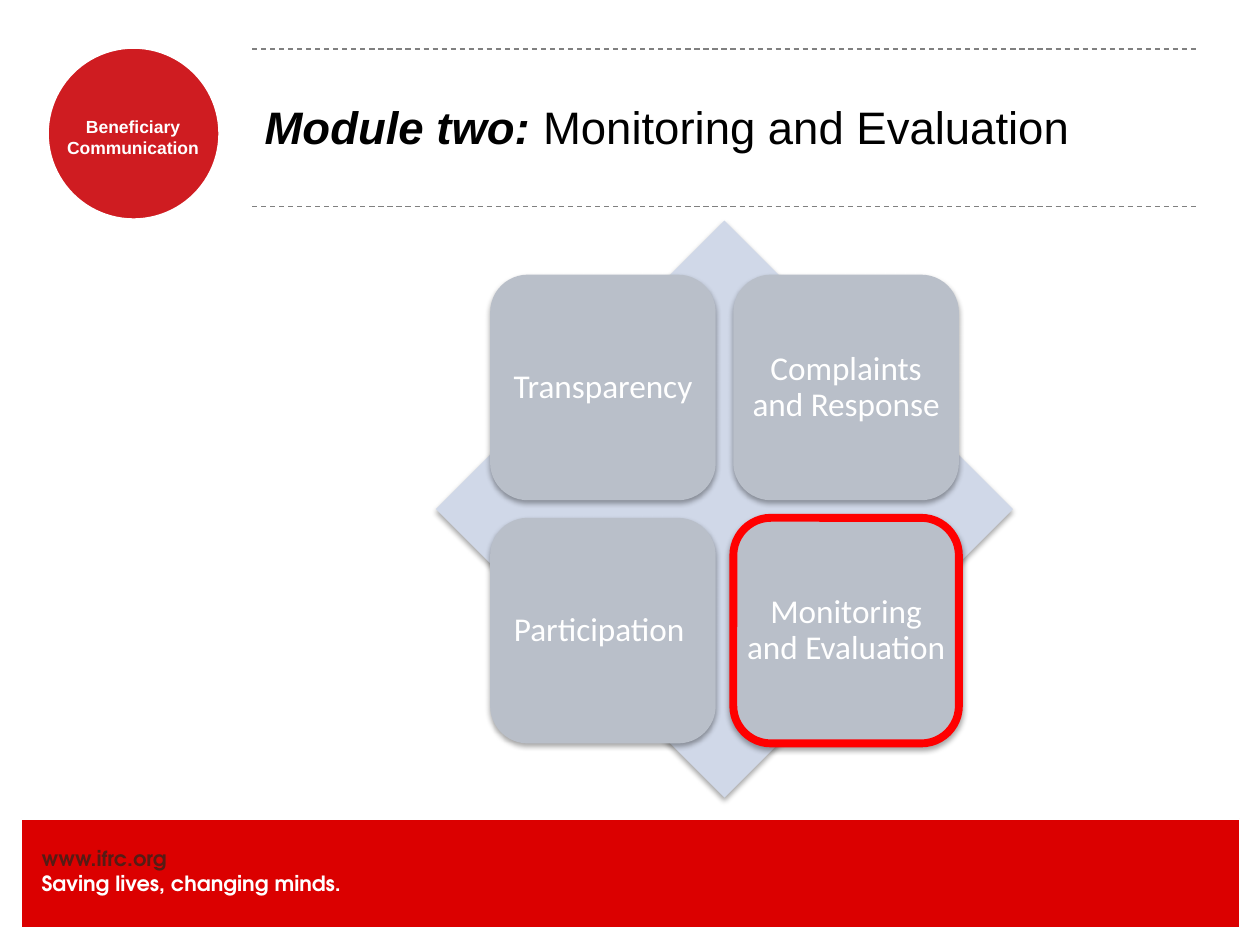
from dataclasses import dataclass
from typing import Optional

from lxml import etree
from pptx import Presentation
from pptx.dml.color import RGBColor
from pptx.enum import dml, shapes, text
from pptx.oxml.ns import qn
from pptx.util import Inches, Pt

WIDE, HIGH = 10, 7.5
WHITE, RED, GREY = "FFFFFF", "DB0000", "808080"
FORM = shapes.MSO_SHAPE


@dataclass
class Box:
    x: float
    y: float
    w: float
    h: float

    def place(self) -> list:
        return [Inches(v) for v in (self.x, self.y, self.w, self.h)]


@dataclass
class Run:
    words: str
    size: float
    font: str
    hue: str
    bold: bool = False
    slant: bool = False


@dataclass
class Card:
    words: str
    col: int
    row: int
    edge: Optional[str] = None


def tint(code: str) -> RGBColor:
    return RGBColor.from_string(code)


def add_run(para, run: Run) -> None:
    part = para.add_run()
    part.text = run.words
    font = part.font
    font.size, font.name = Pt(run.size), run.font
    font.bold, font.italic = run.bold, run.slant
    font.color.rgb = tint(run.hue)


def add_form(slide, kind, box: Box, fill: str,
             edge: Optional[str] = None, width: float = 0.75):
    form = slide.shapes.add_shape(kind, *box.place())
    form.shadow.inherit = False
    form.fill.solid()
    form.fill.fore_color.rgb = tint(fill)
    if edge:
        form.line.color.rgb = tint(edge)
        form.line.width = Pt(width)
    else:
        form.line.fill.background()
    return form


def set_frame(frame) -> None:
    frame.word_wrap = True
    frame.margin_left = frame.margin_right = 0
    frame.margin_top = frame.margin_bottom = 0


def add_label(slide, box: Box, runs: list[Run], align) -> None:
    """Text box with one paragraph per run."""
    frame = slide.shapes.add_textbox(*box.place()).text_frame
    set_frame(frame)
    for i, run in enumerate(runs):
        para = frame.add_paragraph() if i else frame.paragraphs[0]
        para.alignment = align
        add_run(para, run)


def add_rule(slide, y: float, left: float, right: float) -> None:
    rule = slide.shapes.add_connector(
        shapes.MSO_CONNECTOR.STRAIGHT,
        Inches(left), Inches(y), Inches(right), Inches(y))
    rule.line.color.rgb = tint(GREY)
    rule.line.width = Pt(0.75)
    rule.line.dash_style = dml.MSO_LINE.DASH
    etree.SubElement(rule._element.spPr, qn("a:effectLst"))


def add_shade(form) -> None:
    """Soft shadow falling straight down."""
    glow = form._element.spPr.find(qn("a:effectLst"))
    shade = etree.SubElement(
        glow, qn("a:outerShdw"), blurRad=str(Pt(3.1)), dist=str(Pt(1.8)),
        dir="5400000", rotWithShape="0")
    hue = etree.SubElement(shade, qn("a:srgbClr"), val="000000")
    etree.SubElement(hue, qn("a:alpha"), val="35000")


def add_card(slide, card: Card, box: Box) -> None:
    form = add_form(slide, FORM.ROUNDED_RECTANGLE, box, "B9BFC9", card.edge, 4.5)
    add_shade(form)
    frame = form.text_frame
    set_frame(frame)
    frame.vertical_anchor = text.MSO_ANCHOR.MIDDLE
    para = frame.paragraphs[0]
    para.alignment = text.PP_ALIGN.CENTER
    para.line_spacing = 0.9
    para.space_after = Pt(6.65)
    add_run(para, Run(card.words, 19, "Calibri", WHITE))


def main() -> None:
    deck = Presentation()
    deck.slide_width, deck.slide_height = Inches(WIDE), Inches(HIGH)
    slide = deck.slides.add_slide(deck.slide_layouts[5])

    # Footer band
    add_form(slide, FORM.RECTANGLE, Box(0.17, 6.5, 9.67, 0.86), RED, WHITE)
    face = "TeX Gyre Adventor"
    add_label(slide, Box(0.33, 6.71, 3.42, 0.4), [
        Run("www.ifrc.org", 12, face, "551C15", True),
        Run("Saving lives, changing minds.", 12, face, WHITE, True),
    ], text.PP_ALIGN.LEFT)

    # Round badge
    add_form(slide, FORM.OVAL, Box(0.37, 0.37, 1.38, 1.38), "CF1C21", WHITE, 2.5)
    add_label(slide, Box(0.43, 0.92, 1.25, 0.34), [
        Run("Beneficiary Communication", 10, "Arial", WHITE, True),
    ], text.PP_ALIGN.CENTER)

    # Title between two dashed rules
    head = Box(0.2 * WIDE, 0.38, 0.75 * WIDE, 1.25)
    for y in (0.39, 1.64):
        add_rule(slide, y, head.x, head.x + head.w)
    title = slide.shapes.title
    title.left, title.top, title.width, title.height = head.place()
    title.text_frame.vertical_anchor = text.MSO_ANCHOR.MIDDLE
    para = title.text_frame.paragraphs[0]
    para.alignment = text.PP_ALIGN.LEFT
    add_run(para, Run("Module two: ", 26, "Arial", "000000", True, True))
    add_run(para, Run("Monitoring and Evaluation", 26, "Arial", "000000"))

    # Diamond with a two by two grid of cards around its centre
    gem = Box(3.46, 1.75, 4.58, 4.58)
    add_shade(add_form(slide, FORM.DIAMOND, gem, "D0D8E8"))
    side, gap = 1.79, 0.14
    inset = (gem.w - 2 * side - gap) / 2
    for card in (
        Card("Transparency", 0, 0),
        Card("Complaints and Response", 1, 0),
        Card("Participation ", 0, 1),
        Card("Monitoring and Evaluation ", 1, 1, "FF0000"),
    ):
        add_card(slide, card, Box(gem.x + inset + card.col * (side + gap),
                                  gem.y + inset + card.row * (side + gap),
                                  side, side))

    deck.save("out.pptx")


if __name__ == "__main__":
    main()
